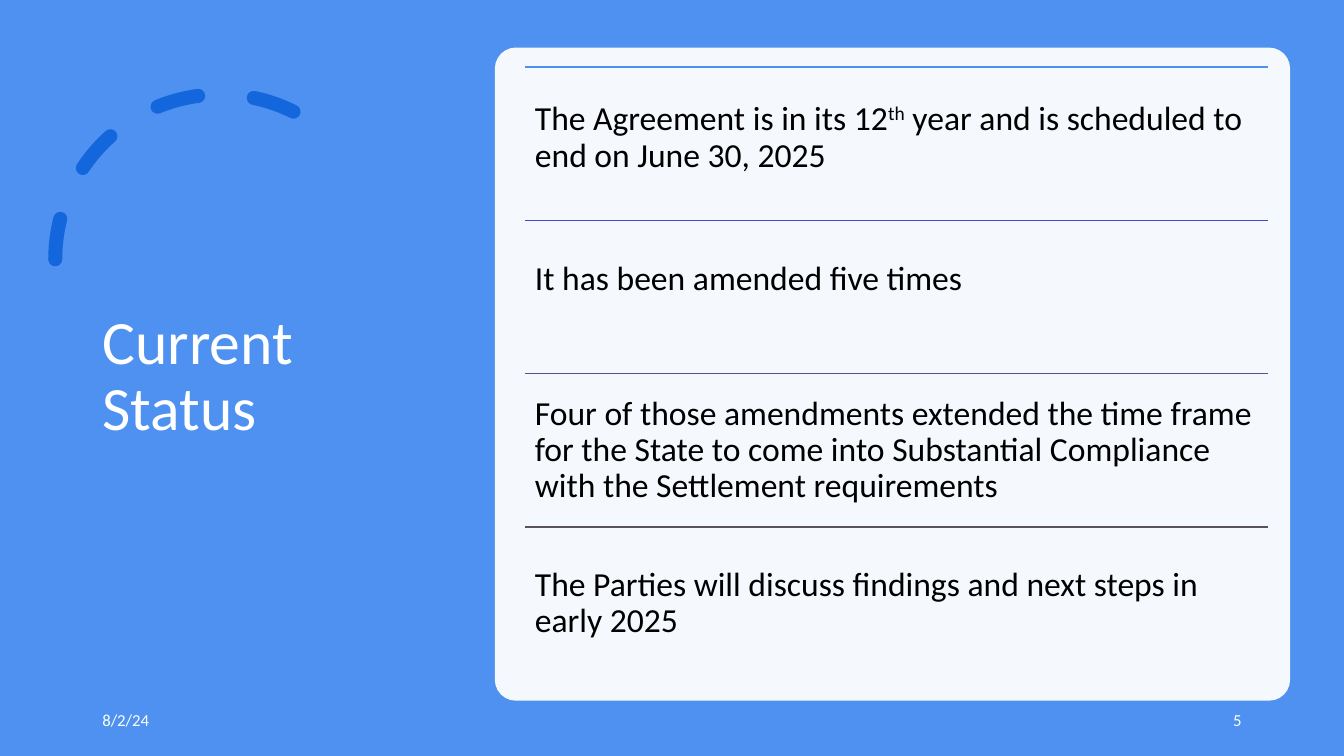
"""Build the Current Status slide."""
from lxml import etree
from pptx import Presentation
from pptx.dml import color
from pptx.enum import dml, shapes, text
from pptx.oxml import ns
from pptx.util import Pt

COLORS = {"blue": "4E91F0", "arc": "1366DC", "white": "FFFFFF", "black": "000000",
          "indigo": "414ACE", "violet": "614B96", "gray": "5B5260"}
TOP, MIDDLE, BOTTOM = text.MSO_ANCHOR.TOP, text.MSO_ANCHOR.MIDDLE, text.MSO_ANCHOR.BOTTOM


def rgb(name):
    return color.RGBColor.from_string(COLORS[name])


def write(box, spans, size, ink, anchor=MIDDLE, align=text.PP_ALIGN.LEFT):
    frame = box.text_frame
    frame.word_wrap = True
    frame.vertical_anchor = anchor
    para = frame.paragraphs[0]
    para.alignment = align
    para.line_spacing = 0.9
    for words in spans:
        span = para.add_run()
        span.text = words
        span.font.name = "Calibri"
        span.font.size = Pt(size)
        span.font.color.rgb = rgb(ink)
    return frame


deck = Presentation()
deck.slide_width, deck.slide_height = Pt(960), Pt(540)
page = deck.slides.add_slide(deck.slide_layouts[5])
page.background.fill.solid()
page.background.fill.fore_color.rgb = rgb("blue")

title = page.shapes.title
title.left, title.top, title.width, title.height = Pt(66), Pt(50.5), Pt(232.5), Pt(438.5)
write(title, ["Current Status"], 44, "white")

arc = page.shapes.add_shape(shapes.MSO_SHAPE.ARC, Pt(39.5), Pt(67.5), Pt(235.5), Pt(235.5))
arc.shadow.inherit = False
arc.adjustments[0], arc.adjustments[1] = 146.13, 0
arc._element.spPr.find(ns.qn("a:xfrm")).set("flipH", "1")
arc.fill.background()
arc.line.color.rgb = rgb("arc")
arc.line.width = Pt(10)
arc.line.dash_style = dml.MSO_LINE.DASH
arc.line._ln.set("cap", "rnd")

card = page.shapes.add_shape(shapes.MSO_SHAPE.ROUNDED_RECTANGLE,
                             Pt(353.5), Pt(34), Pt(568), Pt(466.5))
card.shadow.inherit = False
card.adjustments[0] = 0.032
card.fill.solid()
card.fill.fore_color.rgb = rgb("white")
card_color = card.fill._xPr.find(".//" + ns.qn("a:srgbClr"))
etree.SubElement(card_color, ns.qn("a:alpha")).set("val", "95000")
card.line.fill.background()

for words, left, align in [("8/2/24", 66, text.PP_ALIGN.LEFT),
                           ("5", 678, text.PP_ALIGN.RIGHT)]:
    footer = page.shapes.add_textbox(Pt(left), Pt(500.5), Pt(216), Pt(29))
    write(footer, [words], 12, "white", align=align)

ROW_LEFT, ROW_TOP, ROW_WIDTH, ROW_HEIGHT = 375, 48, 530.5, 109.5
rows = [
    ("blue", BOTTOM, 33,
     ["The Agreement is in its 12", "th", " year and is scheduled to end on June 30, 2025"]),
    ("indigo", MIDDLE, 33, ["It has been amended five times"]),
    ("violet", MIDDLE, 7.2,
     ["Four of those amendments extended the time frame for the State to come into "
      "Substantial Compliance with the Settlement requirements"]),
    ("gray", MIDDLE, 7.2, ["The Parties will discuss findings and next steps in early 2025"]),
]
for index, (line_color, anchor, bottom, spans) in enumerate(rows):
    top = ROW_TOP + index * ROW_HEIGHT
    rule = page.shapes.add_connector(shapes.MSO_CONNECTOR.STRAIGHT, Pt(ROW_LEFT), Pt(top),
                                     Pt(ROW_LEFT + ROW_WIDTH), Pt(top))
    rule.line.color.rgb = rgb(line_color)
    rule.line.width = Pt(1)
    etree.SubElement(rule._element.spPr, ns.qn("a:effectLst"))
    box = page.shapes.add_textbox(Pt(ROW_LEFT), Pt(top), Pt(ROW_WIDTH), Pt(ROW_HEIGHT))
    frame = write(box, spans, 24, "black", anchor)
    frame.margin_left = frame.margin_right = frame.margin_top = Pt(7.2)
    frame.margin_bottom = Pt(bottom)
    for span in frame.paragraphs[0].runs:
        if span.text == "th":
            span.font._element.set("baseline", "30000")

deck.save("out.pptx")
